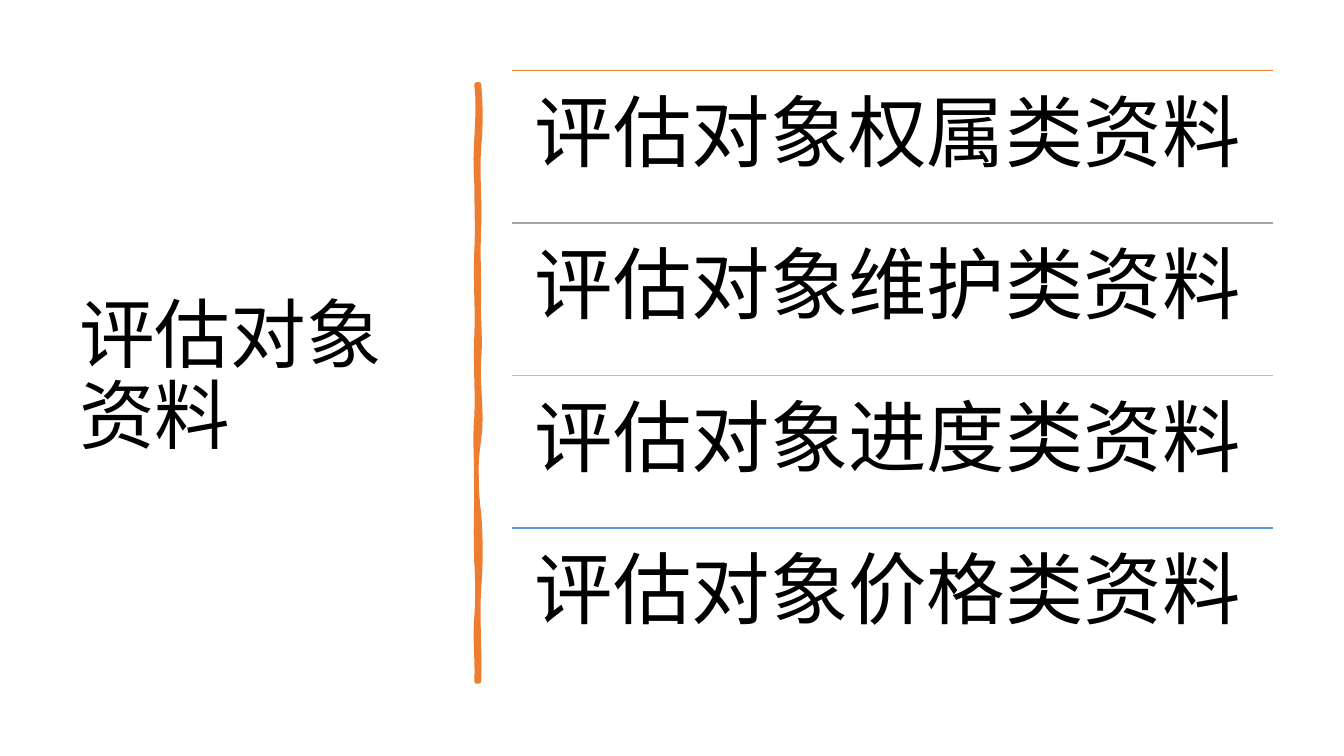
from lxml.etree import SubElement
from pptx import Presentation
from pptx.dml.color import RGBColor
from pptx.enum.shapes import MSO_CONNECTOR
from pptx.enum.text import MSO_ANCHOR, PP_ALIGN
from pptx.oxml.ns import qn
from pptx.util import Cm, Pt

COLORS = {
    "text": "000000",
    "orange": "ED7D31",
    "gray": "A5A5A5",
    "gold": "FFC000",
    "blue": "5B9BD5",
}
ITEMS = [
    ("评估对象权属类资料", "orange"),
    ("评估对象维护类资料", "gray"),
    ("评估对象进度类资料", "gold"),
    ("评估对象价格类资料", "blue"),
]
LIST_LEFT, LIST_TOP, LIST_WIDTH, ROW_HEIGHT = 12.9, 1.78, 19.18, 3.84

RIGHT_YS = [2.13, 3.71, 5.74, 7.47, 9.04, 11.07, 12.95, 14.83, 17.17]
RIGHT_BENDS = [(0.05, 0.05), (-0.05, 0.03), (-0.03, 0), (-0.03, 0.05),
               (-0.05, 0.1), (-0.1, -0.08), (0.05, 0.05), (-0.05, 0.03)]
LEFT_YS = [17.17, 15.57, 14.15, 12.12, 10.54, 8.51, 6.35, 4.6, 2.13]
LEFT_BENDS = [(0.03, -0.05), (0.03, 0.03), (-0.03, 0), (0, -0.05),
              (0.03, -0.03), (0.03, -0.03), (0.03, 0), (-0.08, 0.1)]


def wavy_edge(x, ys, bends, steps=8):
    points = [(x, ys[0])]
    for y0, y1, (b0, b1) in zip(ys, ys[1:], bends):
        for i in range(1, steps + 1):
            t = i / steps
            bend = 3 * t * (1 - t) * ((1 - t) * b0 + t * b1)
            points.append((x + bend, y0 + t * (y1 - y0)))
    return points


class SlideBuilder:
    font = "Noto Sans CJK SC"

    def __init__(self, slide):
        self.s = slide

    def set_text(self, tf, text, size, margins):
        tf.word_wrap = True
        for name, value in margins.items():
            setattr(tf, name, Cm(value))
        p = tf.paragraphs[0]
        for name, value in {"line_spacing": 0.9, "alignment": PP_ALIGN.LEFT}.items():
            setattr(p, name, value)
        r = p.add_run()
        r.text = text
        for name, value in {"name": self.font, "size": Pt(size), "bold": False}.items():
            setattr(r.font, name, value)
        r.font.color.rgb = RGBColor.from_string(COLORS["text"])
        SubElement(r.font._element, qn("a:ea"), typeface=self.font)

    def title(self, text, left, top, width, height, size):
        sp = self.s.shapes.title
        box = {"left": left, "top": top, "width": width, "height": height}
        for name, value in box.items():
            setattr(sp, name, Cm(value))
        sp.text_frame.vertical_anchor = MSO_ANCHOR.MIDDLE
        self.set_text(sp.text_frame, text, size, {"margin_left": 0.25, "margin_right": 0.25})

    def text(self, text, left, top, width, height, size):
        sp = self.s.shapes.add_textbox(Cm(left), Cm(top), Cm(width), Cm(height))
        sp.text_frame.vertical_anchor = MSO_ANCHOR.TOP
        sides = ("left", "top", "right", "bottom")
        self.set_text(sp.text_frame, text, size, {f"margin_{side}": 0.58 for side in sides})

    def rule(self, left, top, width, color):
        line = self.s.shapes.add_connector(
            MSO_CONNECTOR.STRAIGHT, Cm(left), Cm(top), Cm(left + width), Cm(top))
        line.line.color.rgb = RGBColor.from_string(COLORS[color])
        line.line.width = Pt(1)
        SubElement(line._element.spPr, qn("a:effectLst"))

    def brush(self, points, color, width):
        start, *rest = [(Cm(x), Cm(y)) for x, y in points]
        builder = self.s.shapes.build_freeform(*start)
        builder.add_line_segments(rest, close=True)
        sp = builder.convert_to_shape()
        sp.shadow.inherit = False
        sp.fill.solid()
        rgb = RGBColor.from_string(COLORS[color])
        sp.fill.fore_color.rgb = rgb
        sp.line.color.rgb = rgb
        sp.line.width = Pt(width)
        SubElement(sp.line._get_or_add_ln(), qn("a:round"))


def main():
    prs = Presentation()
    prs.slide_width, prs.slide_height = Cm(33.87), Cm(19.05)
    b = SlideBuilder(prs.slides.add_slide(prs.slide_layouts[5]))
    b.title("评估对象资料", 1.75, 1.78, 9.5, 15.52, 54)
    b.brush(wavy_edge(12.07, RIGHT_YS, RIGHT_BENDS)
            + wavy_edge(12.01, LEFT_YS, LEFT_BENDS), "orange", 3.25)
    for i, (label, color) in enumerate(ITEMS):
        top = LIST_TOP + i * ROW_HEIGHT
        b.rule(LIST_LEFT, top, LIST_WIDTH, color)
        b.text(label, LIST_LEFT, top, LIST_WIDTH, ROW_HEIGHT, 56)
    prs.save("out.pptx")


if __name__ == "__main__":
    main()
